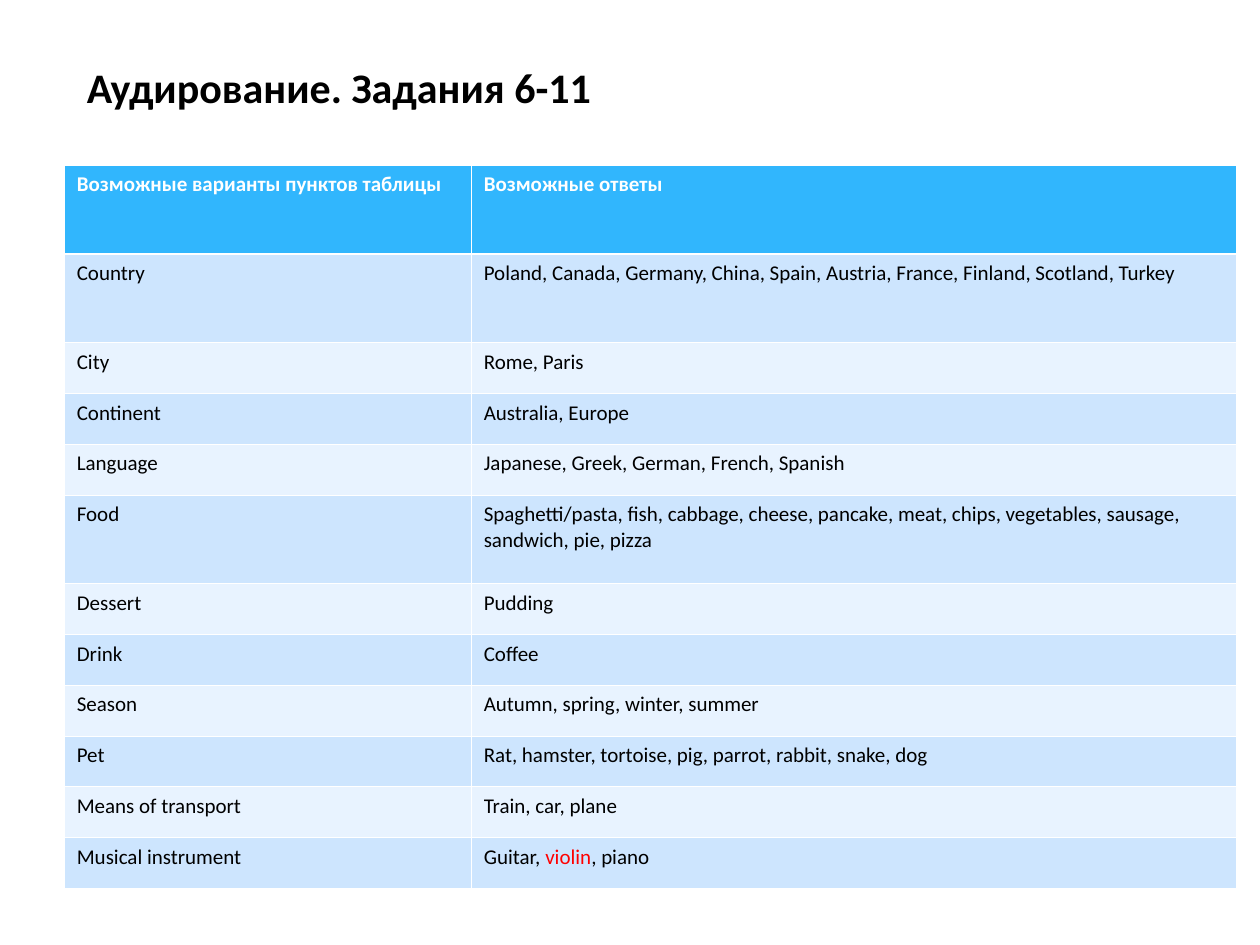
from lxml import etree
from pptx import Presentation
from pptx import util as u
from pptx.dml.color import RGBColor
from pptx.enum import text
from pptx.oxml import ns

COLORS = {
    "ink": "000000",
    "paper": "FFFFFF",
    "header": "31B6FD",
    "odd": "CDE5FE",
    "even": "E8F3FF",
    "accent": "FF0000",
}
HEADER = ("Возможные варианты пунктов таблицы", "Возможные ответы")
ANSWERS = [
    ("Country", "Poland, Canada, Germany, China, Spain, Austria, France, Finland, Scotland, Turkey"),
    ("City", "Rome, Paris"),
    ("Continent", "Australia, Europe"),
    ("Language", "Japanese, Greek, German, French, Spanish"),
    ("Food", "Spaghetti/pasta, fish, cabbage, cheese, pancake, meat, chips, "
             "vegetables, sausage, sandwich, pie, pizza"),
    ("Dessert", "Pudding"),
    ("Drink", "Coffee"),
    ("Season", "Autumn, spring, winter, summer"),
    ("Pet", "Rat, hamster, tortoise, pig, parrot, rabbit, snake, dog"),
    ("Means of transport", "Train, car, plane"),
    ("Musical instrument", [("Guitar, ", "ink"), ("violin", "accent"), (", piano", "ink")]),
]
TALL_ROWS = {"Country", "Food", HEADER[0]}


def apply(target, values):
    for name, value in values.items():
        setattr(target, name, value)


class SlideBuilder:
    font = "Calibri"
    thin, thick = 0.45, 1.48

    def __init__(self, deck):
        self.slide = deck.slides.add_slide(deck.slide_layouts[5])

    def add_spans(self, para, spans, size, bold=False):
        for words, color in spans:
            span = para.add_run()
            span.text = words
            apply(span.font, {"name": self.font, "size": u.Pt(size), "bold": bold})
            span.font.color.rgb = RGBColor.from_string(COLORS[color])

    def title(self, words, left, top, width, height):
        box = self.slide.shapes.title
        apply(box, {"left": u.Inches(left), "top": u.Inches(top),
                    "width": u.Inches(width), "height": u.Inches(height)})
        apply(box.text_frame, {"word_wrap": True, "auto_size": text.MSO_AUTO_SIZE.NONE,
                               "vertical_anchor": text.MSO_ANCHOR.MIDDLE})
        para = box.text_frame.paragraphs[0]
        apply(para, {"alignment": text.PP_ALIGN.LEFT, "space_before": u.Pt(5)})
        self.add_spans(para, [(words, "ink")], 24, True)

    def borders(self, cell, **widths):
        properties = cell._tc.get_or_add_tcPr()
        for index, side in enumerate("LRTB"):
            line = etree.Element(ns.qn(f"a:ln{side}"), w=str(u.Pt(widths.get(side, self.thin))))
            fill = etree.SubElement(line, ns.qn("a:solidFill"))
            etree.SubElement(fill, ns.qn("a:srgbClr"), val=COLORS["paper"])
            properties.insert(index, line)

    def cell(self, cell, content, row):
        header = row == 0
        fill = "header" if header else "odd" if row % 2 else "even"
        cell.fill.solid()
        cell.fill.fore_color.rgb = RGBColor.from_string(COLORS[fill])
        apply(cell, {"margin_left": u.Inches(0.1), "margin_right": u.Inches(0.1),
                     "margin_top": u.Inches(0.05), "margin_bottom": u.Inches(0.05)})
        para = cell.text_frame.paragraphs[0]
        para.line_spacing = 1.02
        if isinstance(content, str):
            content = [(content, "paper" if header else "ink")]
        self.add_spans(para, content, 12, header)
        edge = {0: {"B": self.thick}, 1: {"T": self.thick}}
        self.borders(cell, **edge.get(row, {}))

    def table(self, rows, left, top, widths, height):
        frame = self.slide.shapes.add_table(
            len(rows), len(widths), u.Inches(left), u.Inches(top),
            u.Inches(sum(widths)), u.Inches(height))
        grid = frame.table
        for column, width in zip(grid.columns, widths):
            column.width = u.Inches(width)
        shares = [7 if row[0] in TALL_ROWS else 4 for row in rows]
        for index, (row, share) in enumerate(zip(rows, shares)):
            grid.rows[index].height = u.Inches(height * share / sum(shares))
            for column, content in enumerate(row):
                self.cell(grid.cell(index, column), content, index)


def main():
    deck = Presentation()
    apply(deck, {"slide_width": u.Inches(10), "slide_height": u.Inches(7.5)})
    page = SlideBuilder(deck)
    page.title("Аудирование. Задания 6-11", 0.59, 0, 9.01, 1.37)
    page.table([HEADER, *ANSWERS], 0.51, 1.31, (3.23, 6.07), 5.74)
    deck.save("out.pptx")


if __name__ == "__main__":
    main()
